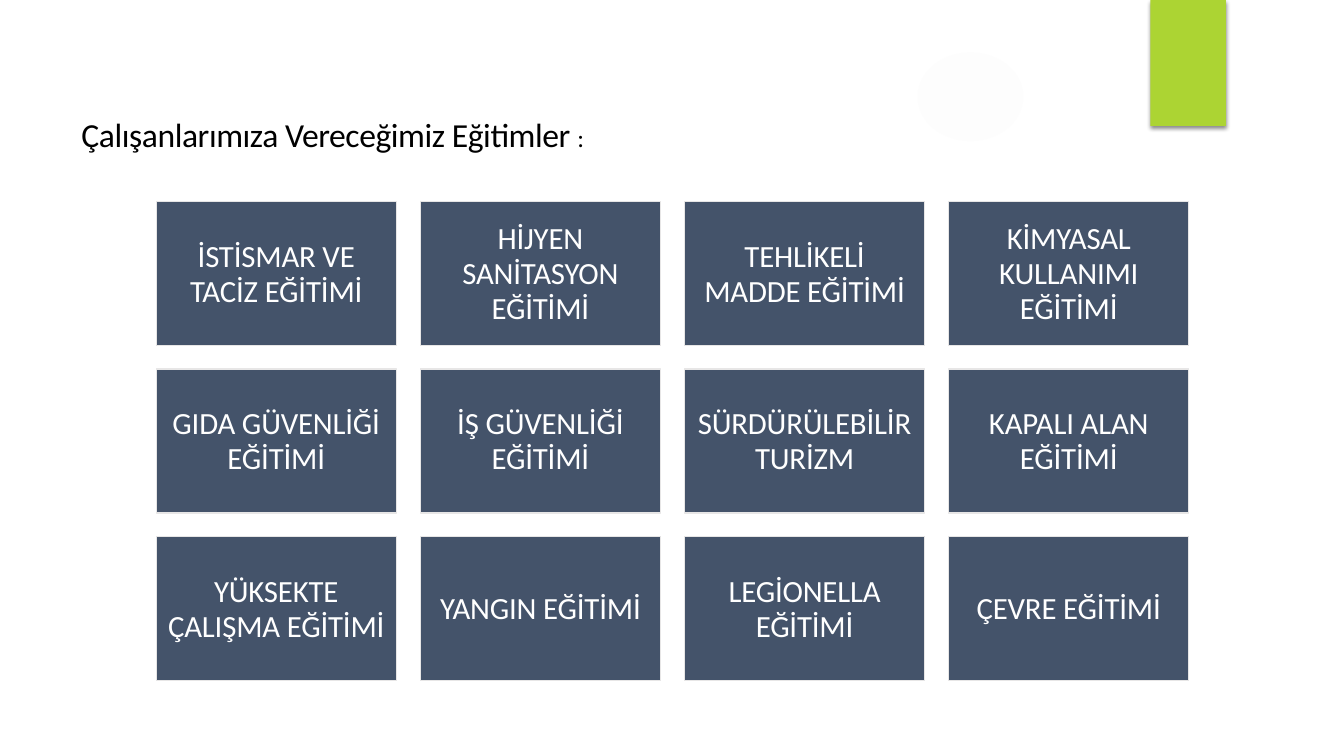
from pptx import Presentation
from pptx.dml.color import RGBColor
from pptx.enum.shapes import MSO_SHAPE
from pptx.enum.text import MSO_ANCHOR, PP_ALIGN
from pptx.oxml import parse_xml
from pptx.oxml.ns import nsdecls
from pptx.util import Inches, Pt

RECT, OVAL = MSO_SHAPE.RECTANGLE, MSO_SHAPE.OVAL
MIDDLE, CENTER = MSO_ANCHOR.MIDDLE, PP_ALIGN.CENTER
WHITE = RGBColor(0xFF, 0xFF, 0xFF)
BLACK = RGBColor(0, 0, 0)
NAVY = RGBColor(0x44, 0x53, 0x6A)
PALE = RGBColor(0xE7, 0xE6, 0xE6)
GREEN = RGBColor(0xAC, 0xD4, 0x33)
GLOW = RGBColor(0xFD, 0xFD, 0xFD)

LEFT, TOP = 1.55, 2
CARD_W, CARD_H = 2.38, 1.43
GAP_X, GAP_Y = 0.24, 0.23
TRAININGS = [
    ["İSTİSMAR VE\nTACİZ EĞİTİMİ", "HİJYEN\nSANİTASYON\nEĞİTİMİ",
     "TEHLİKELİ\nMADDE EĞİTİMİ", "KİMYASAL KULLANIMI EĞİTİMİ"],
    ["GIDA GÜVENLİĞİ\nEĞİTİMİ", "İŞ GÜVENLİĞİ\nEĞİTİMİ",
     "SÜRDÜRÜLEBİLİR\nTURİZM", "KAPALI ALAN\nEĞİTİMİ"],
    ["YÜKSEKTE\nÇALIŞMA EĞİTİMİ", "YANGIN EĞİTİMİ",
     "LEGİONELLA\nEĞİTİMİ", "ÇEVRE EĞİTİMİ"],
]


def add_block(kind, x, y, w, h, color):
    sp = s.shapes.add_shape(kind, Inches(x), Inches(y), Inches(w), Inches(h))
    sp.shadow.inherit = False
    sp.fill.solid()
    sp.fill.fore_color.rgb = color
    sp.line.fill.background()
    return sp


def style_run(r, size, color, spacing):
    r.font.name = "Calibri"
    r.font.size = Pt(size)
    r.font.color.rgb = color
    r.font._element.set("spc", str(spacing))


prs = Presentation()
prs.slide_width, prs.slide_height = Inches(13.33), Inches(7.5)
s = prs.slides.add_slide(prs.slide_layouts[6])

add_block(OVAL, 9.1, 0.52, 1.05, 0.88, GLOW)
tab = add_block(RECT, 11.41, 0, 0.75, 1.25, GREEN)
tab.shadow.inherit = True
tab._element.spPr.append(parse_xml(
    f'<a:effectLst {nsdecls("a")}><a:outerShdw blurRad="38100" dist="25400" dir="5400000">'
    '<a:srgbClr val="000000"><a:alpha val="45000"/></a:srgbClr>'
    '</a:outerShdw></a:effectLst>'))

title = s.shapes.add_textbox(Inches(0.71), Inches(1.08), Inches(8.63), Inches(0.5))
tf = title.text_frame
tf.word_wrap = True
tf.vertical_anchor = MIDDLE
p = tf.paragraphs[0]
for text, size in [("Çalışanlarımıza Vereceğimiz Eğitimler ", 24), (":", 18)]:
    r = p.add_run()
    r.text = text
    style_run(r, size, BLACK, -30)

for row, names in enumerate(TRAININGS):
    for col, name in enumerate(names):
        sp = add_block(RECT, LEFT + col * (CARD_W + GAP_X), TOP + row * (CARD_H + GAP_Y),
                       CARD_W, CARD_H, NAVY)
        sp.line.color.rgb = PALE
        sp.line.width = Pt(0.96)
        tf = sp.text_frame
        tf.word_wrap = True
        tf.vertical_anchor = MIDDLE
        tf.margin_left = tf.margin_right = tf.margin_top = tf.margin_bottom = 0
        tf.text = name
        for p in tf.paragraphs:
            p.alignment = CENTER
            p.line_spacing = Pt(25)
            style_run(p.runs[0], 22, WHITE, -10)

prs.save("out.pptx")
